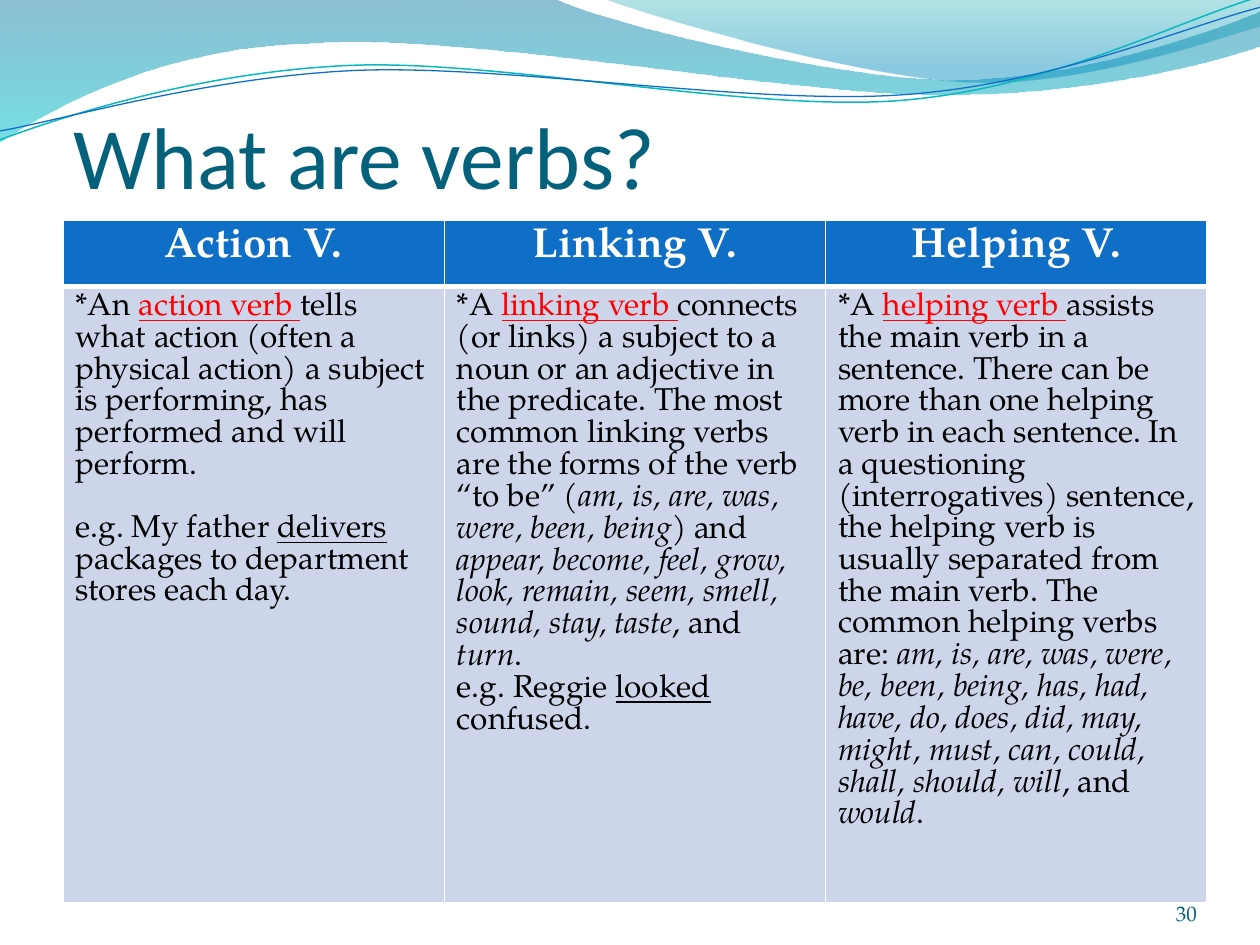
from lxml import etree
from pptx import Presentation
from pptx.dml.color import RGBColor
from pptx.enum.text import MSO_ANCHOR, MSO_AUTO_SIZE, PP_ALIGN
from pptx.oxml.ns import qn
from pptx.util import Cm, Pt

LEFT, CENTER, RIGHT = PP_ALIGN.LEFT, PP_ALIGN.CENTER, PP_ALIGN.RIGHT
BOTTOM = MSO_ANCHOR.BOTTOM
NO_AUTOFIT = MSO_AUTO_SIZE.NONE
TITLE_ONLY = 5

COLORS = {
    "title": "04617B", "number": "045D75", "header": "0F6FC6", "body": "CCD5EA",
    "white": "FFFFFF", "black": "000000", "key": "FF0000",
    "deep": "0074A1", "aqua": "00C6CF", "teal": "00A1A9", "sky": "008BBF",
    "teal_line": "0AB8BF", "blue_line": "0F6FC6",
}

# Wave outlines in cm: one point is a straight step, three points are a Bezier curve
LEFT_WAVE = [
    [(0, 0)], [(11.18, -0.03)],
    [(12.09, 0.43), (16.87, 1.6), (19.25, 1.6)],
    [(21.67, 1.6), (24.33, 0.66), (25.4, 0.23)],
    [(25.43, 0.91)],
    [(24.97, 1.12), (22.1, 1.93), (18.95, 1.91)],
    [(15.8, 1.91), (9.7, 0.71), (6.53, 0.86)],
    [(3.28, 0.91), (1.17, 2.11), (-0.03, 2.87)],
    [(0, 0)],
]
RIGHT_WAVE = [
    [(12.17, -0.03)],
    [(12.93, 0.28), (17.32, 1.57), (19.53, 1.65)],
    [(21.74, 1.75), (24.41, 0.81), (25.4, 0.53)],
    [(25.4, 0)], [(12.17, -0.03)],
]
TEAL_CURVE = [
    [(0, 2.82)],
    [(1.22, 2.36), (4.01, 1.45), (7.04, 1.32)],
    [(10.03, 1.19), (15.06, 2.26), (18.11, 2.03)],
    [(21.16, 1.8), (23.83, 0.38), (25.35, -0.05)],
]
BLUE_CURVE = [
    [(0, 2.64)],
    [(1.19, 2.44), (4.17, 1.55), (7.19, 1.42)],
    [(10.24, 1.3), (15.16, 2.13), (18.21, 1.91)],
    [(21.23, 1.7), (23.9, 0.53), (25.4, 0.15)],
]

# Each verb kind: heading, paragraphs of (text, style) runs, gap between paragraphs in pt
VERB_KINDS = [
    ("Action V.", [
        [("*An ", ""), ("action verb ", "key"),
         ("tells what action (often a physical action) a subject is performing, "
          "has performed and will perform.", "")],
        [("e.g. My father ", ""), ("delivers", "underline"),
         (" packages to department stores each day.", "")],
    ], 18),
    ("Linking V.", [
        [("*A ", ""), ("linking verb ", "key"),
         ("connects (or links) a subject to a noun or an adjective in the predicate. "
          "The most common linking verbs are the forms of the verb “to be” (", ""),
         ("am, is, are, was, were, been, being", "italic"), (") and ", ""),
         ("appear, become, feel, grow, look, remain, seem, smell, sound, stay, taste",
          "italic"),
         (", and ", ""), ("turn", "italic"), (".", "")],
        [("e.g. Reggie ", ""), ("looked", "underline"), (" confused.", "")],
    ], 0),
    ("Helping V.", [
        [("*A ", ""), ("helping verb ", "key"),
         ("assists the main verb in a sentence. There can be more than one helping verb "
          "in each sentence. In a questioning (interrogatives) sentence, the helping verb "
          "is usually separated from the main verb. The common helping verbs are: ", ""),
         ("am, is, are, was, were, be, been, being, has, had, have, do, does, did, may, "
          "might, must, can, could, shall, should, will", "italic"),
         (", and ", ""), ("would", "italic"), (".", "")],
    ], 0),
]


def rgb(name):
    return RGBColor.from_string(COLORS[name])


def add_solid(parent, name):
    paint = etree.SubElement(parent, qn("a:solidFill"))
    etree.SubElement(paint, qn("a:srgbClr"), val=COLORS[name])


class VerbSlide:
    heading_font = "Calibri"
    body_font = "TeX Gyre Pagella"

    def __init__(self, deck):
        self.slide = deck.slides.add_slide(deck.slide_layouts[TITLE_ONLY])

    def outline(self, steps, closed):
        start, *ends = [(Cm(x), Cm(y)) for x, y in (step[-1] for step in steps)]
        builder = self.slide.shapes.build_freeform(*start)
        builder.add_line_segments(ends, close=closed)
        shape = builder.convert_to_shape()
        shape.shadow.inherit = False
        # Bend the straight segments that have control points
        segments = list(shape.element.spPr.iter(qn("a:lnTo")))
        for segment, step in zip(segments, steps[1:]):
            if len(step) == 3:
                bend = etree.Element(qn("a:cubicBezTo"))
                for x, y in step:
                    etree.SubElement(bend, qn("a:pt"), x=str(Cm(x) - shape.left),
                                     y=str(Cm(y) - shape.top))
                segment.getparent().replace(segment, bend)
        return shape

    def wave(self, steps, stops):
        shape = self.outline(steps, True)
        shape.line.fill.background()
        shape.fill.gradient()
        shape.fill.gradient_angle = 270
        for stop, (position, color, _) in zip(shape.fill.gradient_stops, stops):
            stop.position = position
            stop.color.rgb = rgb(color)
        for tint, (_, _, opacity) in zip(shape.element.spPr.iter(qn("a:srgbClr")), stops):
            etree.SubElement(tint, qn("a:alpha"), val=str(opacity * 1000))

    def curve(self, steps, color, width):
        shape = self.outline(steps, False)
        shape.fill.background()
        shape.line.color.rgb = rgb(color)
        shape.line.width = Pt(width)

    def format(self, paragraph, font, size, color, align=LEFT, bold=False):
        paragraph.alignment = align
        paragraph.font.name = font
        paragraph.font.size = Pt(size)
        paragraph.font.bold = bold
        paragraph.font.color.rgb = rgb(color)

    def frame(self, text_frame, text, insets):
        text_frame.word_wrap = True
        text_frame.auto_size = NO_AUTOFIT
        text_frame.vertical_anchor = BOTTOM
        (text_frame.margin_left, text_frame.margin_top,
         text_frame.margin_right, text_frame.margin_bottom) = map(Cm, insets)
        text_frame.text = text
        return text_frame.paragraphs[0]

    def title(self, text, box):
        title = self.slide.shapes.title
        title.left, title.top, title.width, title.height = map(Cm, box)
        line = self.frame(title.text_frame, text, (0, 0.13, 0, 0))
        self.format(line, self.heading_font, 50, "title")
        # Bring the title in front of the waves
        self.slide.shapes.element.append(title.element)

    def number(self, text, box):
        label = self.slide.shapes.add_textbox(*map(Cm, box))
        line = self.frame(label.text_frame, text, (0, 0, 0, 0))
        self.format(line, self.body_font, 12, "number", RIGHT)

    def cell(self, cell, fill, top, bottom):
        cell.fill.solid()
        cell.fill.fore_color.rgb = rgb(fill)
        sides = (("L", 1), ("R", 1), ("T", top), ("B", bottom))
        for index, (side, width) in enumerate(sides):
            border = etree.Element(qn("a:ln" + side), w=str(Pt(width)))
            add_solid(border, "white")
            cell._tc.get_or_add_tcPr().insert(index, border)

    def verb_table(self, kinds, box, header_height):
        width, height = box[2:]
        table = self.slide.shapes.add_table(2, len(kinds), *map(Cm, box)).table
        table.horz_banding = False
        table.rows[0].height = Cm(header_height)
        table.rows[1].height = Cm(height - header_height)
        for column, (heading, paragraphs, gap) in enumerate(kinds):
            table.columns[column].width = Cm(width / len(kinds))
            header, body = table.cell(0, column), table.cell(1, column)
            self.cell(header, "header", 1, 3)
            self.cell(body, "body", 3, 1)
            header.text = heading
            self.format(header.text_frame.paragraphs[0], self.body_font, 24, "white",
                        CENTER, True)
            for index, runs in enumerate(paragraphs):
                line = (body.text_frame.add_paragraph() if index
                        else body.text_frame.paragraphs[0])
                self.format(line, self.body_font, 18, "black")
                line.space_before = Pt(gap if index else 0)
                for text, style in runs:
                    self.run(line, text, style)

    def run(self, line, text, style):
        run = line.add_run()
        run.text = text
        if style == "italic":
            run.font.italic = True
        elif style:
            run.font.underline = True
        if style == "key":
            run.font.color.rgb = rgb("key")
            # The underline takes the colour of the word
            add_solid(etree.SubElement(run.font._rPr, qn("a:uFill")), "key")


def main():
    deck = Presentation()
    deck.slide_width, deck.slide_height = Cm(25.4), Cm(19.05)
    verbs = VerbSlide(deck)

    # Wave decoration
    verbs.wave(LEFT_WAVE, [(0, "deep", 45), (1, "aqua", 55)])
    verbs.wave(RIGHT_WAVE, [(0, "teal", 30), (0.8, "sky", 45)])
    verbs.curve(TEAL_CURVE, "teal_line", 0.85)
    verbs.curve(BLUE_CURVE, "blue_line", 0.75)

    # Content
    verbs.title("What are verbs?", (1.48, 1.68, 22.86, 2.49))
    verbs.verb_table(VERB_KINDS, (1.27, 4.45, 23.06, 13.75), 1.33)
    verbs.number("30", (22.02, 17.65, 2.11, 1.02))

    deck.save("out.pptx")


if __name__ == "__main__":
    main()
